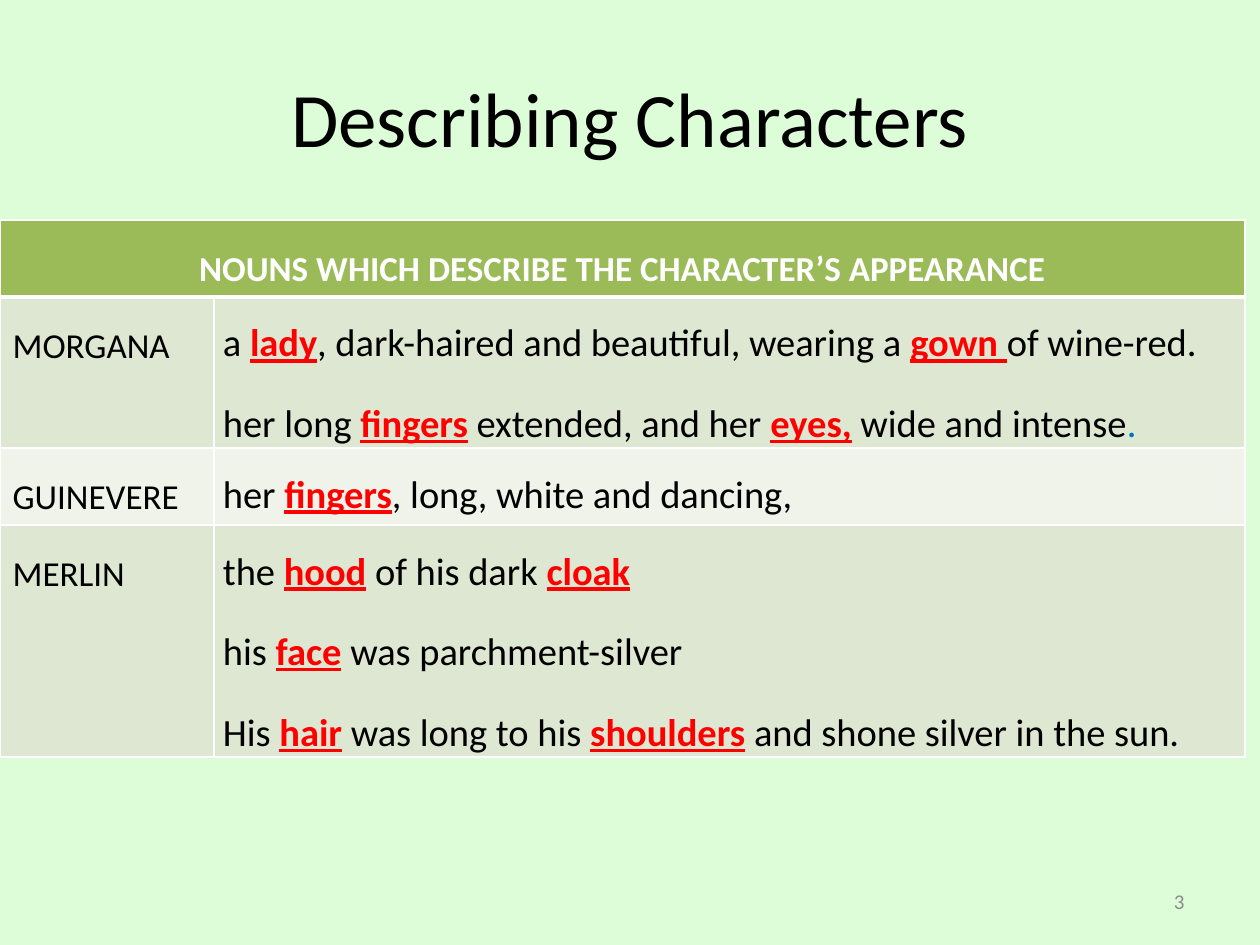
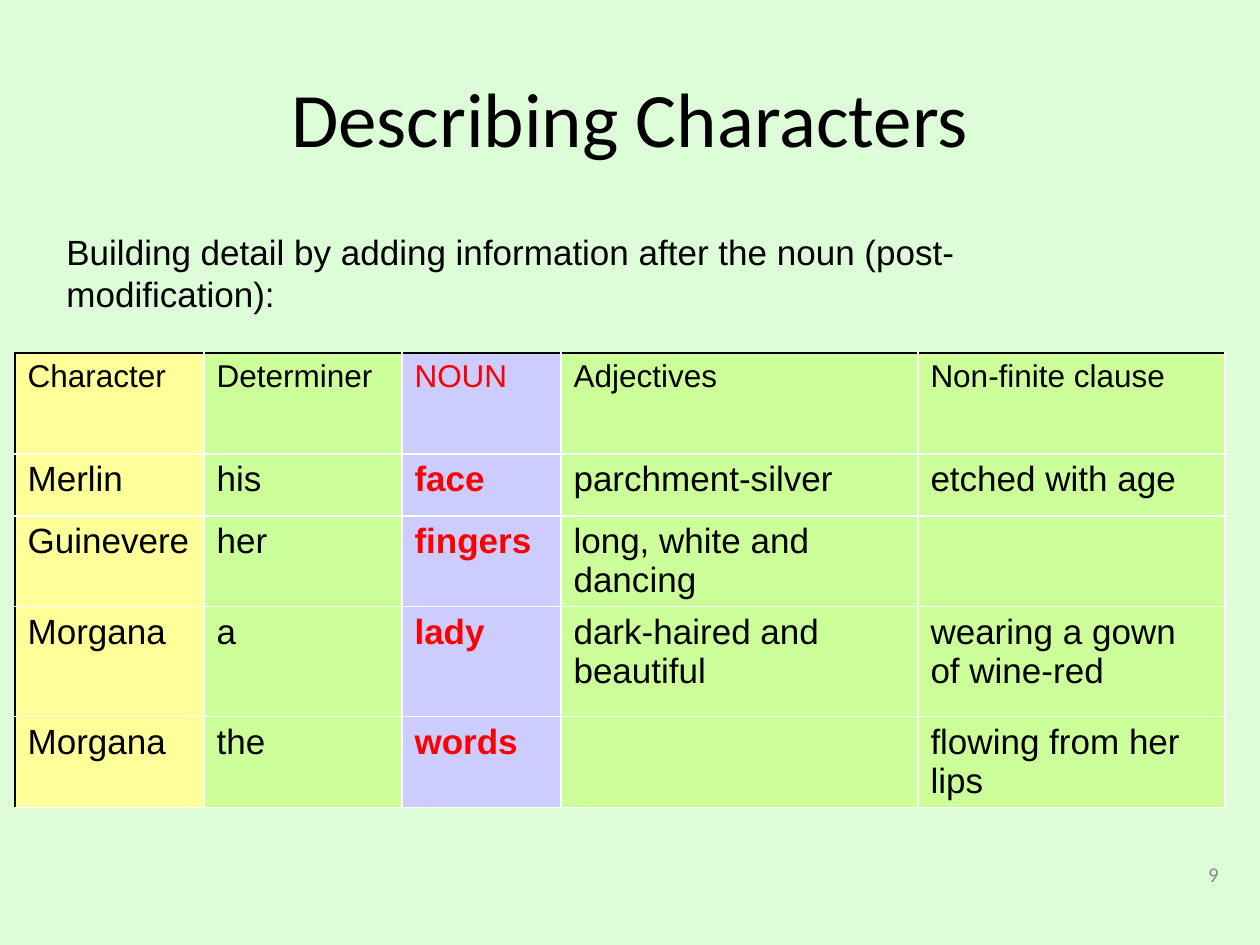
"""Build two slides on describing characters, each with a title, a table and a page number."""
import pptx
import pptx.util
import pptx.dml.color
import pptx.enum.text
import pptx.oxml
import pptx.oxml.ns

PX = 914400 / 126
ALIGN = pptx.enum.text.PP_ALIGN
ANCHOR = pptx.enum.text.MSO_ANCHOR
COLORS = {
    "page": "DCFDD7", "black": "000000", "white": "FFFFFF", "red": "FF0000",
    "blue": "0070C0", "grey": "8C8C8C", "head": "9BBB59", "band": "DEE7D1",
    "pale": "EFF3EA", "yellow": "FFFF99", "lime": "CCFF99", "lilac": "CCCCFF",
}
MARKS = {
    "*": {"color": "red", "bold": True, "underline": True},
    "!": {"color": "red", "bold": True},
    "^": {"color": "red"},
    "~": {"color": "blue"},
}


def write(tf, lines, size, name="Calibri", color="black", bold=False, **para):
    """Fill a text frame; '|' parts runs and a leading mark picks a run style."""
    tf.word_wrap = True
    for i, line in enumerate(lines):
        p = tf.paragraphs[0] if i == 0 else tf.add_paragraph()
        for key, value in para.items():
            setattr(p, key, value)
        for part in line.split("|"):
            style = {"name": name, "size": pptx.util.Pt(size), "color": color, "bold": bold}
            style.update(MARKS.get(part[:1], {}))
            r = p.add_run()
            r.text = part[1:] if part[:1] in MARKS else part
            r.font.color.rgb = pptx.dml.color.RGBColor.from_string(COLORS[style.pop("color")])
            for key, value in style.items():
                setattr(r.font, key, value)


def paint(cell, fill, **edges):
    """Fill a cell and draw white hairline borders, save for the edges given."""
    tcPr = cell._tc.get_or_add_tcPr()
    for side in "LRTB":
        color, width = edges.get(side, ("white", 1))
        tcPr.append(pptx.oxml.parse_xml(
            f'<a:ln{side} {pptx.oxml.ns.nsdecls("a")} w="{width * 12700}"><a:solidFill>'
            f'<a:srgbClr val="{COLORS[color]}"/></a:solidFill></a:ln{side}>'))
    cell.fill.solid()
    cell.fill.fore_color.rgb = pptx.dml.color.RGBColor.from_string(COLORS[fill])


prs = pptx.Presentation()
prs.slide_width, prs.slide_height = round(1260 * PX), round(945 * PX)

pages = [
    {"number": "3", "number_at": (903, 876, 294, 50), "table_at": (0, 220),
     "cols": [214, 1031], "rows": [77, 151, 77, 231]},
    {"number": "9", "number_at": (937, 849, 294, 50), "table_at": (15, 353),
     "cols": [189, 198, 159, 357, 307], "rows": [101, 62, 90, 110, 91]},
]
slides, tables = [], []
for page in pages:
    s = prs.slides.add_slide(prs.slide_layouts[5])
    s.background.fill.solid()
    s.background.fill.fore_color.rgb = pptx.dml.color.RGBColor.from_string(COLORS["page"])
    title = s.shapes.title
    title.left, title.top, title.width, title.height = [round(v * PX) for v in (63, 38, 1134, 157)]
    title.text_frame.vertical_anchor = ANCHOR.MIDDLE
    write(title.text_frame, ["Describing Characters"], 44, alignment=ALIGN.CENTER)

    cols, rows = page["cols"], page["rows"]
    box = [round(v * PX) for v in (*page["table_at"], sum(cols), sum(rows))]
    table = s.shapes.add_table(len(rows), len(cols), *box).table
    table.first_row = table.horz_banding = False
    for col, width in zip(table.columns, cols):
        col.width = round(width * PX)
    for row, height in zip(table.rows, rows):
        row.height = round(height * PX)

    sp = s.shapes.add_textbox(*[round(v * PX) for v in page["number_at"]])
    sp.text_frame.vertical_anchor = ANCHOR.MIDDLE
    write(sp.text_frame, [page["number"]], 12, color="grey", alignment=ALIGN.RIGHT)
    slides.append(s)
    tables.append(table)

nouns, clauses = tables
spacing = {"line_spacing": 1.5, "space_before": pptx.util.Pt(6)}
nouns.cell(0, 0).merge(nouns.cell(0, 1))
for c in range(2):
    paint(nouns.cell(0, c), "head", B=("white", 3))
write(nouns.cell(0, 0).text_frame, ["NOUNS WHICH DESCRIBE THE CHARACTER’S APPEARANCE"], 20,
      color="white", bold=True, alignment=ALIGN.CENTER, **spacing)
quotes = [
    ("MORGANA", "band", [
        "a |*lady|, dark-haired and beautiful, wearing a |*gown |of wine-red.",
        "her long |*fingers| extended, and her |*eyes,| wide and intense|~."]),
    ("GUINEVERE", "pale", ["her |*fingers|, long, white and dancing,"]),
    ("MERLIN", "band", [
        "the |*hood| of his dark |*cloak",
        "his |*face| was parchment-silver",
        "His |*hair| was long to his |*shoulders| and shone silver in the sun."]),
]
for i, (character, fill, lines) in enumerate(quotes, 1):
    name_cell, quote_cell = nouns.cell(i, 0), nouns.cell(i, 1)
    for cell in (name_cell, quote_cell):
        paint(cell, fill, T=("white", 3 if i == 1 else 1))
    write(name_cell.text_frame, [character], 20, **spacing)
    for key, value in {"left": 9, "right": 9, "top": 0, "bottom": 0}.items():
        setattr(quote_cell, f"margin_{key}", round(value * PX))
    write(quote_cell.text_frame, lines, 22, alignment=ALIGN.JUSTIFY, **spacing)

sp = slides[1].shapes.add_textbox(*[round(v * PX) for v in (54, 224, 1121, 55)])
write(sp.text_frame, ["Building detail by adding information after the noun (post-modification):"],
      20, "Arial")
grid = [
    ["Character", "Determiner", "^NOUN", "Adjectives", "Non-finite clause"],
    ["Merlin", "his", "!face", "parchment-silver", "etched with age"],
    ["Guinevere", "her", "!fingers", "long, white and dancing", ""],
    ["Morgana", "a", "!lady", "dark-haired and beautiful", "wearing a gown of wine-red"],
    ["Morgana", "the", "!words", "", "flowing from her lips"],
]
fills = ["yellow", "lime", "lilac", "lime", "lime"]
for i, row in enumerate(grid):
    for c, text in enumerate(row):
        cell = clauses.cell(i, c)
        paint(cell, fills[c], L=("white" if c else "black", 1), T=("white" if i else "black", 1))
        if text:
            write(cell.text_frame, [text], 20 if i else 18, "Arial")

prs.save("out.pptx")
